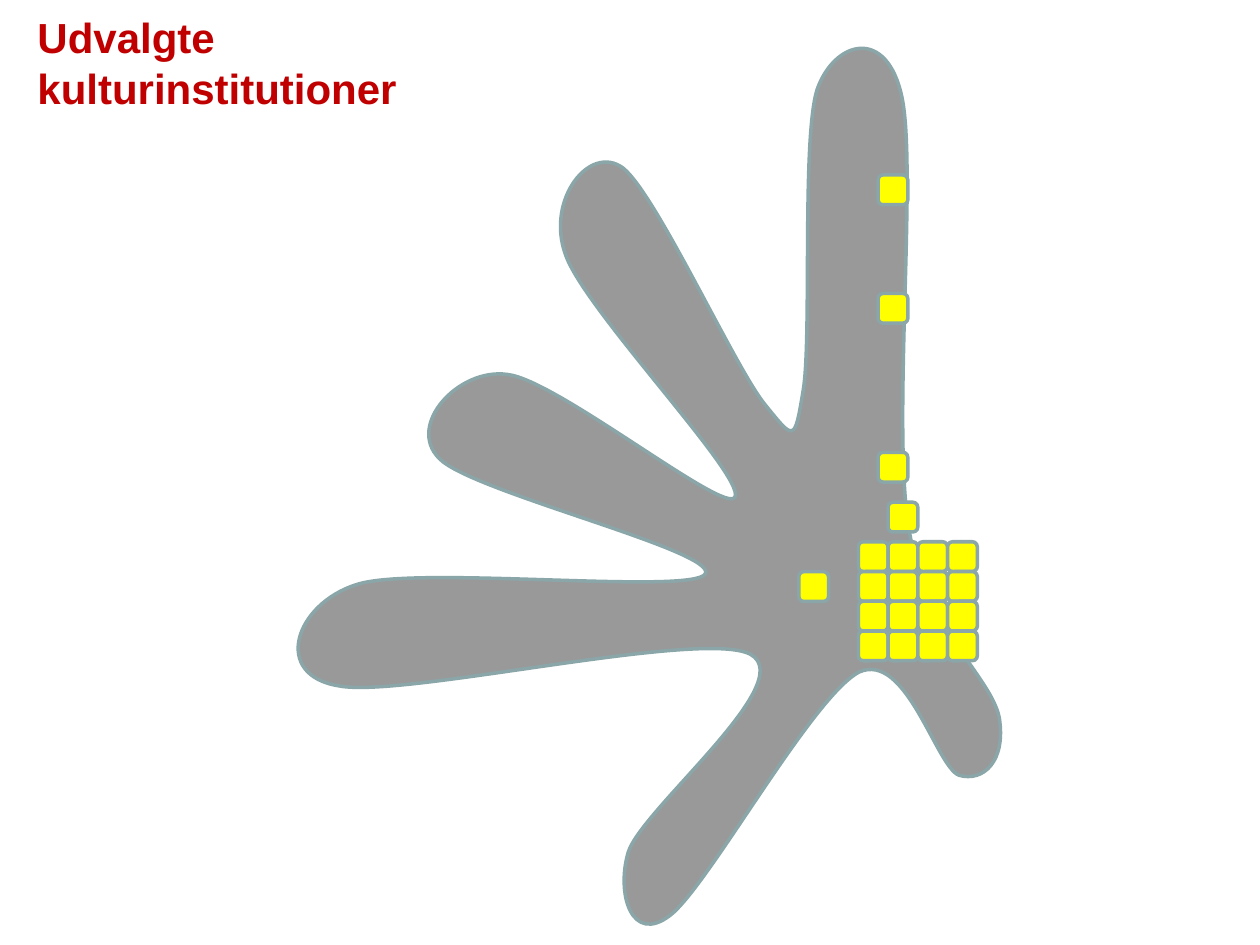
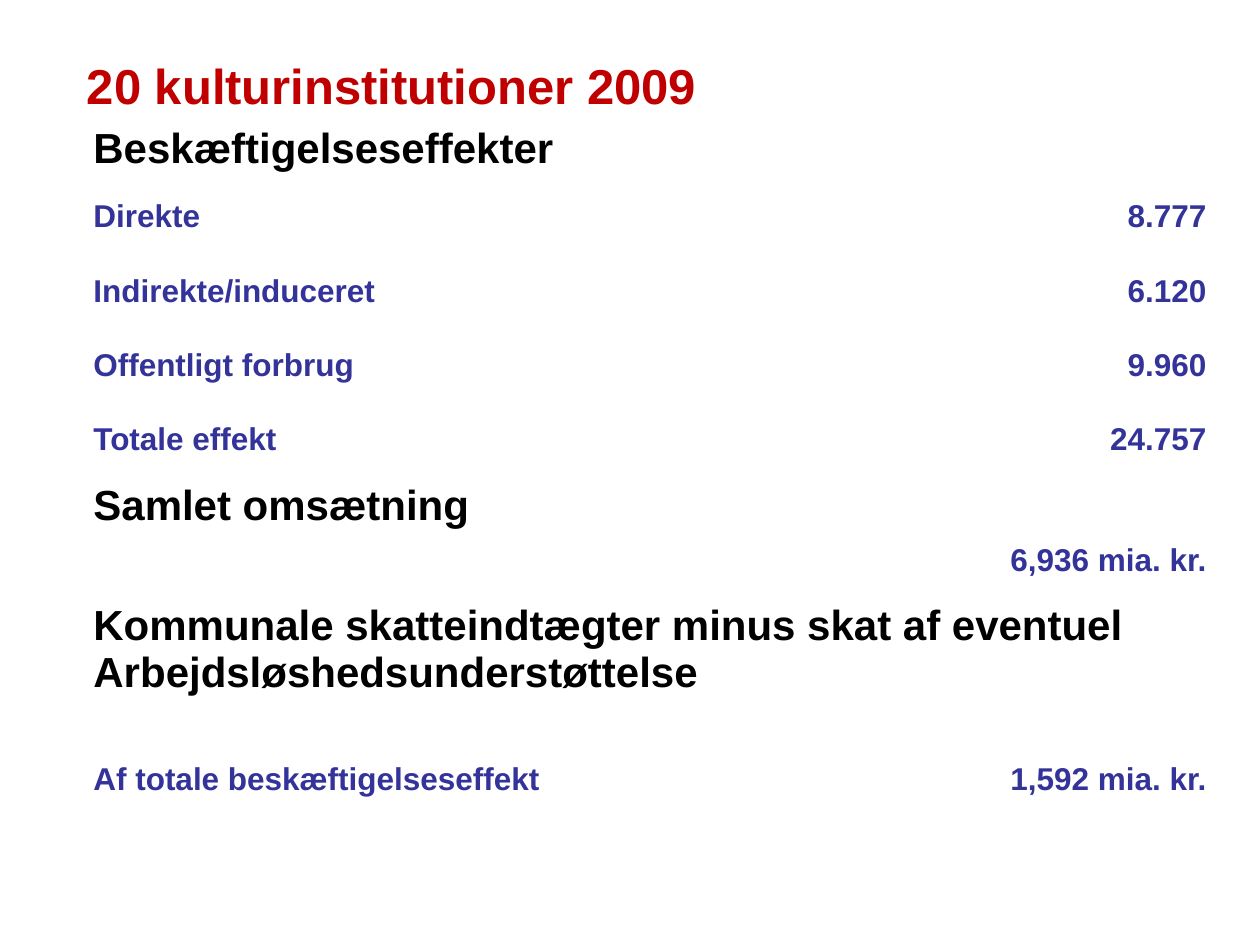
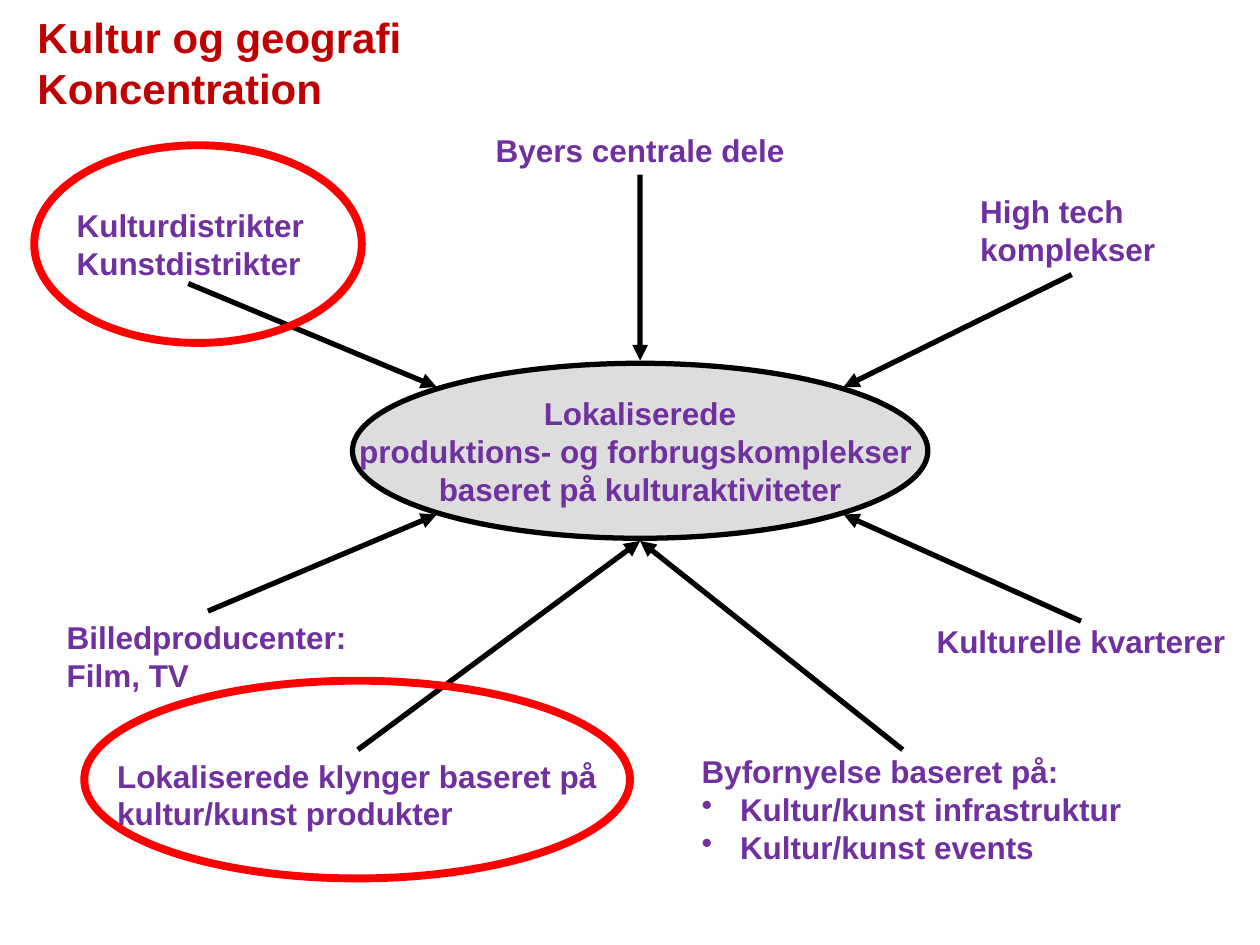
import dataclasses
import math
import typing

import lxml.etree
import pptx
import pptx.dml.color
import pptx.enum.shapes
import pptx.enum.text
import pptx.oxml.ns
import pptx.util

Pt = pptx.util.Pt
Align = pptx.enum.text.PP_ALIGN
Preset = pptx.enum.shapes.MSO_SHAPE


@dataclasses.dataclass(frozen=True)
class Theme:
    """Colours, type sizes and line widths shared by the slides."""
    font: str = "Arial"
    title: str = "C00000"
    heading: str = "000000"
    figure: str = "333399"
    label: str = "7030A0"
    hand: str = "999999"
    outline: str = "8AA6A8"
    marker: str = "FFFF00"
    hub: str = "DDDDDD"
    ink: str = "000000"
    ring: str = "FF0000"
    large: float = 28
    medium: float = 24
    small: float = 18
    thin: float = 2
    thick: float = 3
    ring_width: float = 4.5


class Box(typing.NamedTuple):
    """A rectangle in points."""
    left: float
    top: float
    width: float
    height: float

    def lengths(self):
        """Return the four sides as lengths."""
        return [Pt(side) for side in self]

    def inner(self, left, top, width, height):
        """Return a box placed relative to this one."""
        return Box(self.left + left, self.top + top, width, height)


class EffectRow(typing.NamedTuple):
    """A table row; without a figure it is a heading across both columns."""
    height: float
    lines: list
    figure: typing.Optional[str] = None


class Spoke(typing.NamedTuple):
    """A label and the angle, clockwise from the right, where its arrow meets the hub."""
    angle: float
    box: Box
    lines: list


THEME = Theme()
PAGE = Box(0, 0, 720, 540)
CORNER_TITLE = PAGE.inner(14.2, 0, 258, 71.3)
BULLET = "• "
BULLET_INDENT = 22

HAND_BOX = Box(155, 15, 420, 525)
WRIST = (364, 285)
HAND_CURVES = {
    "north finger": [
        [(355, 225), (369, 83), (360.5, 41)],
        [(352, 0), (322, 8), (312, 36)],
        [(303, 64), (309, 178), (304, 208)],
        [(299, 238), (299, 237), (282, 216)],
    ],
    "north-west finger": [
        [(265, 195), (220, 96), (201, 81)],
        [(182, 67), (157, 99), (168, 130)],
        [(178, 161), (271, 257), (265, 269)],
    ],
    "upper west finger": [
        [(260, 280), (163, 202), (135, 199)],
        [(107, 195), (77, 228), (96, 247)],
        [(114, 266), (256, 300), (248, 313)],
    ],
    "lower west finger": [
        [(240, 325), (83, 308), (49, 319)],
        [(13.5, 330), (0, 371), (39, 377)],
        [(76, 384), (247, 344), (274, 359)],
    ],
    "south-west finger": [
        [(302, 375), (212, 447), (204, 472)],
        [(197, 496), (206, 525), (228, 508)],
        [(250, 491), (309, 383), (336, 369)],
    ],
    "south-east finger": [
        [(363, 357), (380, 423), (393, 428)],
        [(407, 432), (420, 420), (416, 395)],
        [(411, 371), (373, 344), WRIST],
    ],
}

MARKER_SIZE = 17
MARKER_BLOCK = (335.5, 294.6)
BLOCK_SIDE = 4
SINGLE_MARKERS = [(346.8, 85), (346.8, 152.7), (346.8, 243.5),
                  (352.5, 272), (301.5, 311.7)]

TABLE_BOX = PAGE.inner(48.4, 71.5, 646, 445.6)
NAME_WIDTH = 442
CELL_MARGIN = 5
TALL, SHORT = 42.4, 34.5
EFFECT_ROWS = [
    EffectRow(TALL, ["Beskæftigelseseffekter"]),
    EffectRow(TALL, ["Direkte"], "8.777"),
    EffectRow(TALL, ["Indirekte/induceret"], "6.120"),
    EffectRow(TALL, ["Offentligt forbrug"], "9.960"),
    EffectRow(SHORT, ["Totale effekt"], "24.757"),
    EffectRow(SHORT, ["Samlet omsætning"]),
    EffectRow(SHORT, [], "6,936 mia. kr."),
    EffectRow(91, ["Kommunale skatteindtægter minus skat af eventuel",
                   "Arbejdsløshedsunderstøttelse"]),
    EffectRow(81.4, ["Af totale beskæftigelseseffekt"], "1,592 mia. kr."),
]

HUB_BOX = Box(201.4, 207.6, 328.8, 100)
HUB_LINES = ["Lokaliserede", "produktions- og forbrugskomplekser ",
             "baseret på kulturaktiviteter"]
ARROW_GAP = 1.5
SIDE_TOP, SIDE_BOTTOM = 0, 2
SPOKES = [
    Spoke(45, Box(529.9, 355, 175.7, 22.3), ["Kulturelle kvarterer"]),
    Spoke(90, Box(393.8, 428.4, 244.1, 67.7),
          ["Byfornyelse baseret på:", BULLET + "Kultur/kunst infrastruktur",
           BULLET + "Kultur/kunst events"]),
    Spoke(90, Box(59.8, 428.4, 289.4, 51.1),
          ["Lokaliserede klynger baseret på", "kultur/kunst produkter"]),
    Spoke(135, Box(31, 349.2, 175.7, 51.1), ["Billedproducenter:", "Film, TV"]),
    Spoke(225, Box(36.7, 116.6, 141.8, 45.4), ["Kulturdistrikter", "Kunstdistrikter"]),
    Spoke(270, Box(258.1, 71.5, 215.3, 28.3), ["Byers centrale dele"]),
    Spoke(315, Box(553, 105.8, 118.8, 51.1), ["High tech", "komplekser"]),
]
RINGS = [Box(19.6, 83, 187.2, 113), Box(48.2, 389, 311.8, 113)]


def rgb(code):
    """Turn a hexadecimal code into a colour."""
    return pptx.dml.color.RGBColor.from_string(code)


def add_element(parent, tag, **attributes):
    """Append a drawing element that python-pptx has no method for."""
    return lxml.etree.SubElement(parent, pptx.oxml.ns.qn(tag), attributes)


def style_bullet(para):
    """Give a paragraph a hanging round bullet."""
    properties = para._p.get_or_add_pPr()
    properties.set("marL", str(Pt(BULLET_INDENT)))
    properties.set("indent", str(-Pt(BULLET_INDENT)))
    add_element(properties, "a:buChar", char=BULLET.strip())


def write(frame, lines, size, colour, align=Align.LEFT):
    """Write one bold paragraph for each line."""
    for index, line in enumerate(lines):
        para = frame.add_paragraph() if index else frame.paragraphs[0]
        para.alignment = align
        if line.startswith(BULLET):
            style_bullet(para)
        span = para.add_run()
        span.text = line.removeprefix(BULLET)
        span.font.name = THEME.font
        span.font.size = Pt(size)
        span.font.bold = True
        span.font.color.rgb = rgb(colour)


def prepare_frame(frame, wrap):
    """Centre a text frame vertically and keep its size fixed."""
    frame.auto_size = pptx.enum.text.MSO_AUTO_SIZE.NONE
    frame.vertical_anchor = pptx.enum.text.MSO_ANCHOR.MIDDLE
    frame.word_wrap = wrap


def write_label(shape, lines, align):
    """Write unwrapped diagram text into a shape."""
    prepare_frame(shape.text_frame, wrap=False)
    write(shape.text_frame, lines, THEME.small, THEME.label, align)


def paint(shape, fill, line, width):
    """Set fill and outline and remove the shadow."""
    shape.shadow.inherit = False
    if fill:
        shape.fill.solid()
        shape.fill.fore_color.rgb = rgb(fill)
    else:
        shape.fill.background()
    shape.line.color.rgb = rgb(line)
    shape.line.width = Pt(width)


def add_preset(page, preset, box, fill, line, width):
    """Add a painted preset shape."""
    shape = page.shapes.add_shape(preset, *box.lengths())
    paint(shape, fill, line, width)
    return shape


def add_titled_page(deck, box, lines, size=THEME.medium, wrap=True):
    """Add a title-only slide and format its title."""
    page = deck.slides.add_slide(deck.slide_layouts.get_by_name("Title Only"))
    title = page.shapes.title
    title.left, title.top, title.width, title.height = box.lengths()
    prepare_frame(title.text_frame, wrap)
    write(title.text_frame, lines, size, THEME.title)
    return page


def bend_segments(shape):
    """Turn every three straight segments of a freeform into one cubic curve."""
    segments = iter(list(shape.element.iter(pptx.oxml.ns.qn("a:lnTo"))))
    for triple in zip(segments, segments, segments):
        curve = lxml.etree.Element(pptx.oxml.ns.qn("a:cubicBezTo"))
        triple[0].addprevious(curve)
        for segment in triple:
            curve.append(segment[0])
            segment.getparent().remove(segment)


def add_hand(page, box):
    """Draw the hand as one closed outline, finger by finger."""
    def place(point):
        """Move a point of the hand onto the page."""
        return Pt(box.left + point[0]), Pt(box.top + point[1])

    builder = page.shapes.build_freeform(*place(WRIST))
    points = [place(point) for finger in HAND_CURVES.values()
              for curve in finger for point in curve]
    builder.add_line_segments(points, close=True)
    hand = builder.convert_to_shape()
    bend_segments(hand)
    paint(hand, THEME.hand, THEME.outline, THEME.thin)


def add_markers(page, box):
    """Place the single markers and the square block of markers on the hand."""
    left, top = MARKER_BLOCK
    block = [(left + column * MARKER_SIZE, top + row * MARKER_SIZE)
             for row in range(BLOCK_SIDE) for column in range(BLOCK_SIDE)]
    for x, y in SINGLE_MARKERS + block:
        add_preset(page, Preset.ROUNDED_RECTANGLE,
                   box.inner(x, y, MARKER_SIZE, MARKER_SIZE),
                   THEME.marker, THEME.outline, THEME.thin)


def clear_cell(cell):
    """Remove a cell's fill and set its margins."""
    cell.fill.background()
    cell.margin_left = cell.margin_right = Pt(CELL_MARGIN)
    cell.margin_top = cell.margin_bottom = 0


def add_effect_table(page, box):
    """Add the plain table of effects with headings across both columns."""
    table = page.shapes.add_table(len(EFFECT_ROWS), 2, *box.lengths()).table
    table.first_row = table.horz_banding = False
    table.columns[0].width = Pt(NAME_WIDTH)
    table.columns[1].width = Pt(box.width - NAME_WIDTH)
    for index, effect in enumerate(EFFECT_ROWS):
        table.rows[index].height = Pt(effect.height)
        name, value = table.cell(index, 0), table.cell(index, 1)
        clear_cell(name)
        clear_cell(value)
        if effect.figure:
            write(name.text_frame, effect.lines, THEME.small, THEME.figure)
            write(value.text_frame, [effect.figure], THEME.small, THEME.figure, Align.RIGHT)
        else:
            name.merge(value)
            write(name.text_frame, effect.lines, THEME.medium, THEME.heading)


def add_hub(page, box):
    """Add the central ellipse with its text."""
    hub = add_preset(page, Preset.OVAL, box, THEME.hub, THEME.ink, THEME.thick)
    write_label(hub, HUB_LINES, Align.CENTER)


def find_hub_point(hub, angle):
    """Return the point just outside the hub's edge at an angle."""
    turn = math.radians(angle)
    across, down = hub.width / 2, hub.height / 2
    return (hub.left + across + across * math.cos(turn),
            hub.top + down + (down + ARROW_GAP) * math.sin(turn))


def add_arrow(page, label, side, target):
    """Add an arrow from a side of a label to a point."""
    arrow = page.shapes.add_connector(
        pptx.enum.shapes.MSO_CONNECTOR.STRAIGHT, 0, 0, *map(Pt, target))
    arrow.begin_connect(label, side)
    arrow.line.color.rgb = rgb(THEME.ink)
    arrow.line.width = Pt(THEME.thick)
    add_element(arrow.line._get_or_add_ln(), "a:tailEnd", type="triangle")
    add_element(arrow.element.spPr, "a:effectLst")


def add_spoke(page, hub, spoke):
    """Add a label and the arrow from its side that faces the hub."""
    label = page.shapes.add_textbox(*spoke.box.lengths())
    write_label(label, spoke.lines, Align.CENTER if len(spoke.lines) == 1 else Align.LEFT)
    side = SIDE_BOTTOM if spoke.box.top < hub.top else SIDE_TOP
    add_arrow(page, label, side, find_hub_point(hub, spoke.angle))


def build_hand_page(deck):
    """Build the slide with the hand and the chosen institutions."""
    page = add_titled_page(deck, CORNER_TITLE, ["Udvalgte", "kulturinstitutioner"])
    add_hand(page, HAND_BOX)
    add_markers(page, HAND_BOX)


def build_effect_page(deck):
    """Build the slide with the table of effects."""
    page = add_titled_page(deck, PAGE.inner(42.5, 31.7, 368.6, 33.8),
                           ["20 kulturinstitutioner 2009"], THEME.large, wrap=False)
    add_effect_table(page, TABLE_BOX)


def build_geography_page(deck):
    """Build the slide with the hub, its spokes and the rings."""
    page = add_titled_page(deck, CORNER_TITLE, ["Kultur og geografi", "Koncentration"])
    add_hub(page, HUB_BOX)
    for spoke in SPOKES:
        add_spoke(page, HUB_BOX, spoke)
    for ring in RINGS:
        add_preset(page, Preset.OVAL, ring, None, THEME.ring, THEME.ring_width)


def main():
    """Build and save the deck."""
    deck = pptx.Presentation()
    deck.slide_width, deck.slide_height = Pt(PAGE.width), Pt(PAGE.height)
    build_hand_page(deck)
    build_effect_page(deck)
    build_geography_page(deck)
    deck.save("out.pptx")


if __name__ == "__main__":
    main()
